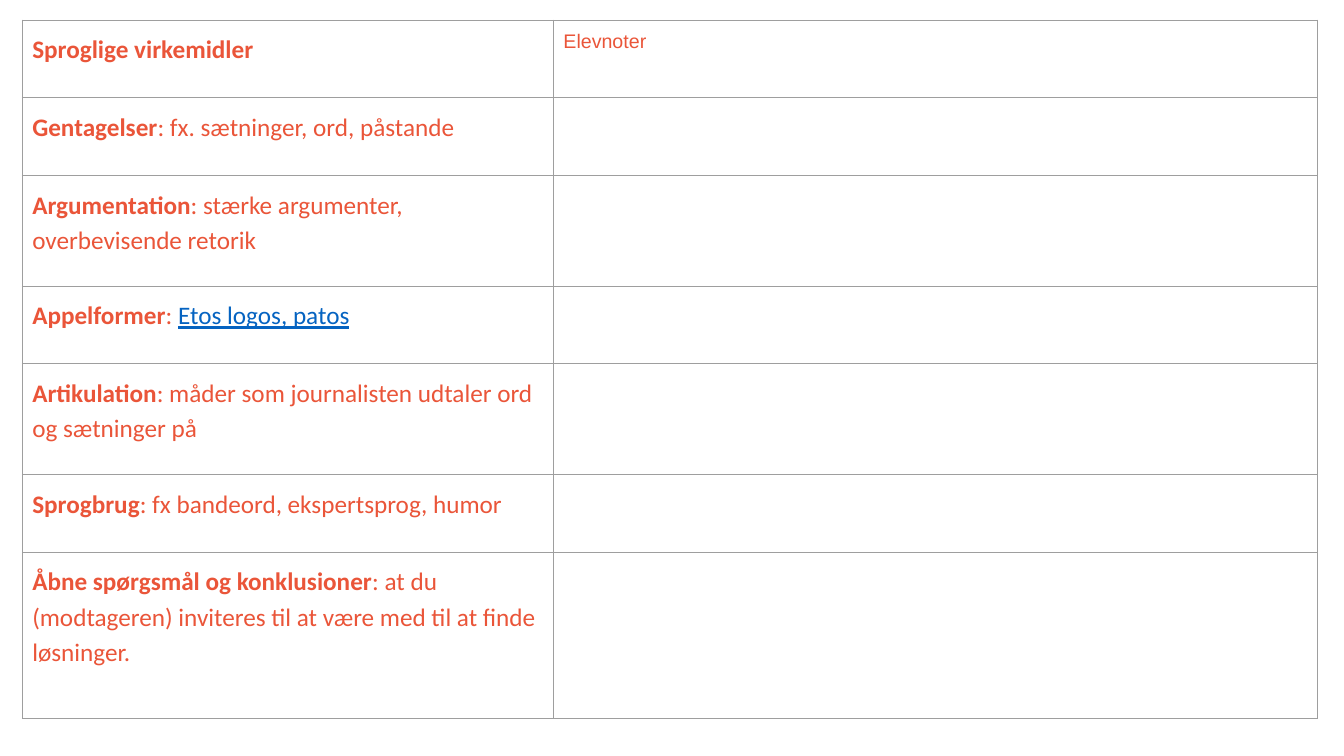
from dataclasses import dataclass

import lxml.etree
import pptx
import pptx.dml.color
import pptx.oxml
import pptx.oxml.ns
import pptx.util


@dataclass(frozen=True)
class Theme:
    text: str = "EA5539"
    link: str = "0563C1"
    border: str = "9E9E9E"
    body_font: str = "Calibri"
    note_font: str = "Arial"
    body_size: float = 18
    note_size: float = 14
    spacing: float = 9
    line_spacing: float = 1.15
    border_width: float = 0.75
    cell_margin: float = 0.1


THEME = Theme()
SLIDE_SIZE = (13.33, 7.5)
TABLE_BOX = (0.22, 0.2, 12.85, 6.93)
COLUMN_SHARES = (0.41, 0.59)
LINE_HEIGHTS = {1: 0.77, 2: 1.1, 3: 1.65}

# Term, explanation, link text, number of text lines
DEVICES = [
    ("Sproglige virkemidler", "", "", 1),
    ("Gentagelser", ": fx. sætninger, ord, påstande", "", 1),
    ("Argumentation", ": stærke argumenter, overbevisende retorik", "", 2),
    ("Appelformer", ": ", "Etos logos, patos", 1),
    ("Artikulation", ": måder som journalisten udtaler ord og sætninger på", "", 2),
    ("Sprogbrug", ": fx bandeord, ekspertsprog, humor", "", 1),
    ("Åbne spørgsmål og konklusioner",
     ": at du (modtageren) inviteres til at være med til at finde løsninger.", "", 3),
]


def rgb(value):
    return pptx.dml.color.RGBColor.from_string(value)


def style_cell(cell):
    """Clear the fill, set equal margins and outline all four sides."""
    cell.fill.background()
    margin = pptx.util.Inches(THEME.cell_margin)
    cell.margin_left = cell.margin_right = margin
    cell.margin_top = cell.margin_bottom = margin
    properties = cell._tc.get_or_add_tcPr()
    for index, side in enumerate(("lnL", "lnR", "lnT", "lnB")):
        line = lxml.etree.Element(pptx.oxml.ns.qn(f"a:{side}"))
        line.set("w", str(pptx.util.Pt(THEME.border_width)))
        fill = lxml.etree.SubElement(line, pptx.oxml.ns.qn("a:solidFill"))
        color = lxml.etree.SubElement(fill, pptx.oxml.ns.qn("a:srgbClr"))
        color.set("val", THEME.border)
        properties.insert(index, line)


def set_font(para, name, size):
    para.font.name = name
    para.font.size = pptx.util.Pt(size)
    para.font.color.rgb = rgb(THEME.text)


def add_span(para, text, bold=False):
    span = para.add_run()
    span.text = text
    span.font.bold = bold
    return span


def write_device(cell, term, explanation, link):
    para = cell.text_frame.paragraphs[0]
    para.line_spacing = THEME.line_spacing
    para.space_before = para.space_after = pptx.util.Pt(THEME.spacing)
    set_font(para, THEME.body_font, THEME.body_size)
    add_span(para, term, bold=True)
    if explanation:
        add_span(para, explanation)
    if link:
        span = add_span(para, link)
        span.font.color.rgb = rgb(THEME.link)
        span.font.underline = True


def write_note_heading(cell):
    para = cell.text_frame.paragraphs[0]
    set_font(para, THEME.note_font, THEME.note_size)
    add_span(para, "Elevnoter")


def add_device_table(page, box):
    left, top, width, height = (pptx.util.Inches(length) for length in box)
    table = page.shapes.add_table(
        len(DEVICES), len(COLUMN_SHARES), left, top, width, height).table
    table.first_row = table.horz_banding = False
    for column, share in zip(table.columns, COLUMN_SHARES):
        column.width = int(width * share)
    for row, (term, explanation, link, lines) in zip(table.rows, DEVICES):
        row.height = pptx.util.Inches(LINE_HEIGHTS[lines])
        for cell in row.cells:
            style_cell(cell)
        write_device(row.cells[0], term, explanation, link)
    write_note_heading(table.cell(0, 1))


def main():
    deck = pptx.Presentation()
    deck.slide_width, deck.slide_height = map(pptx.util.Inches, SLIDE_SIZE)
    blank_layout = deck.slide_layouts[6]
    page = deck.slides.add_slide(blank_layout)
    add_device_table(page, TABLE_BOX)
    deck.save("out.pptx")


if __name__ == "__main__":
    main()
